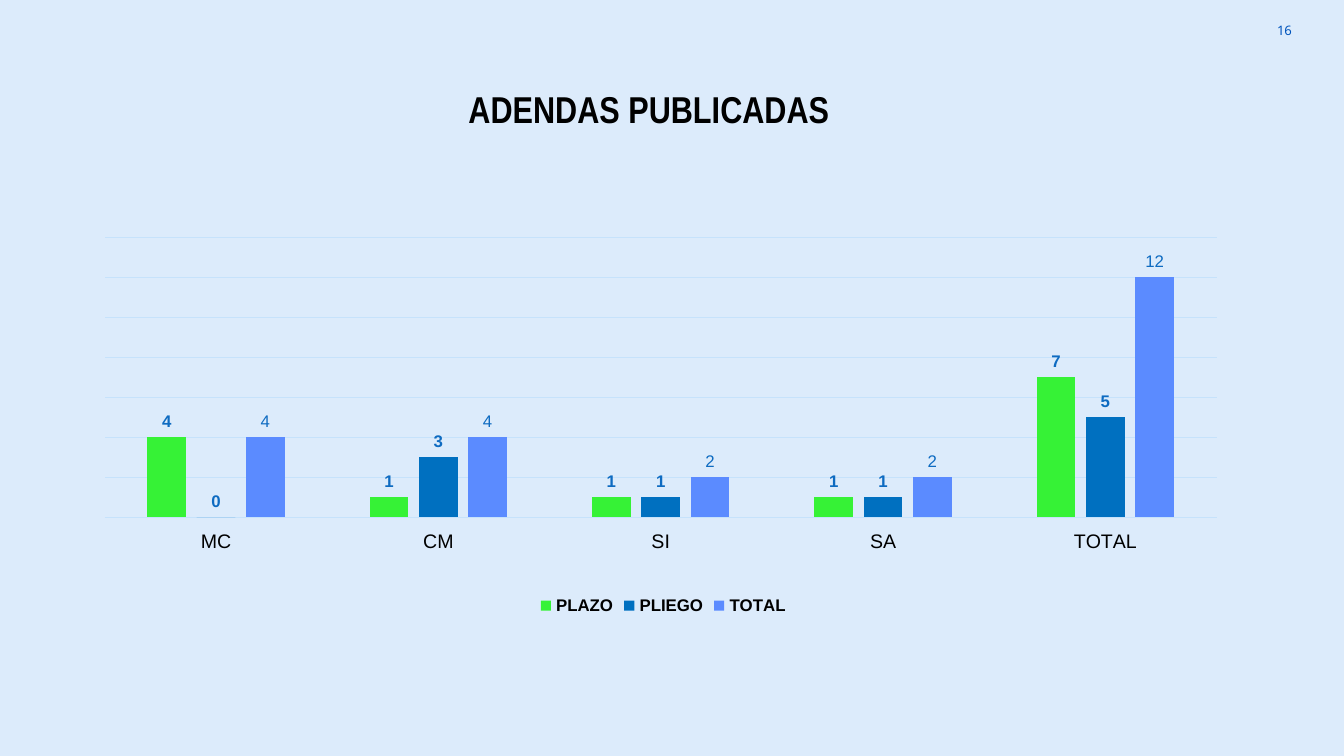
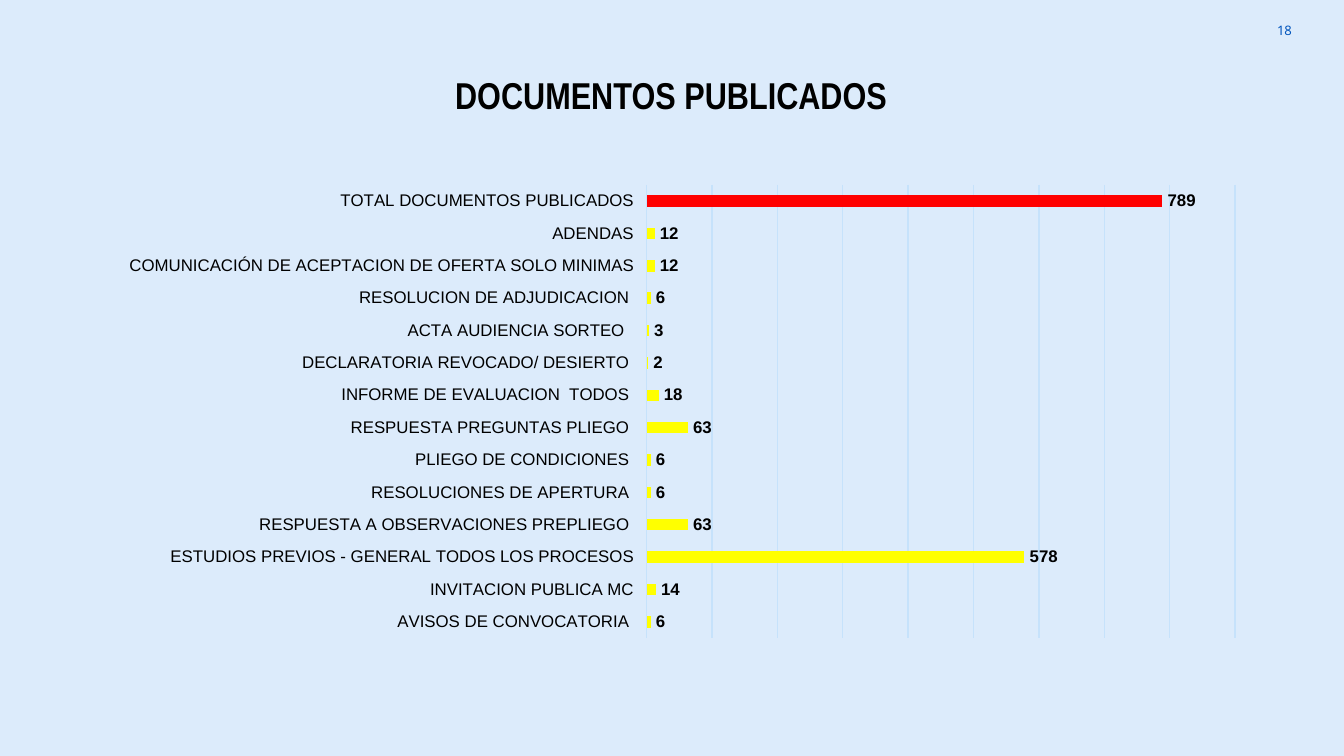
from lxml import etree
from pptx import Presentation
from pptx.chart.data import CategoryChartData
from pptx.dml.color import RGBColor
from pptx.enum.chart import XL_CHART_TYPE, XL_LABEL_POSITION, XL_LEGEND_POSITION, XL_TICK_LABEL_POSITION, XL_TICK_MARK
from pptx.enum.text import MSO_ANCHOR, MSO_AUTO_SIZE, PP_ALIGN
from pptx.oxml.ns import qn
from pptx.util import Pt

COLUMNS, BARS = XL_CHART_TYPE.COLUMN_CLUSTERED, XL_CHART_TYPE.BAR_CLUSTERED
OUTSIDE_END = XL_LABEL_POSITION.OUTSIDE_END
LEGEND_BOTTOM = XL_LEGEND_POSITION.BOTTOM
LABELS_LOW = XL_TICK_LABEL_POSITION.LOW
NO_TICK = XL_TICK_MARK.NONE
TOP, MIDDLE = MSO_ANCHOR.TOP, MSO_ANCHOR.MIDDLE
CENTER, RIGHT = PP_ALIGN.CENTER, PP_ALIGN.RIGHT
NO_AUTOFIT = MSO_AUTO_SIZE.NONE

# Shared look
BACKGROUND, INK, CHART_TEXT = "DCEBFB", "000000", "073763"
GRID, PAGE_BLUE, LABEL_BLUE = "C6E2FB", "0054BC", "0E6BC1"
GREEN, BLUE, PERIWINKLE = "36F236", "0070C0", "5B8BFF"
YELLOW, RED = "FFFF00", "FF0000"
TITLE_ONLY = 5

# Addenda by type of process: name, colour, bold labels, values
PROCESSES = ["MC", "CM", "SI", "SA", "TOTAL"]
ADDENDA = [
    ("PLAZO", GREEN, True, [4, 1, 1, 1, 7]),
    ("PLIEGO", BLUE, True, [0, 3, 1, 1, 5]),
    ("TOTAL", PERIWINKLE, False, [4, 4, 2, 2, 12]),
]

# Published documents, from the bottom bar to the top one
DOCUMENTS = {
    "AVISOS DE CONVOCATORIA ": 6,
    "INVITACION PUBLICA MC": 14,
    "ESTUDIOS PREVIOS - GENERAL TODOS LOS PROCESOS": 578,
    "RESPUESTA A OBSERVACIONES PREPLIEGO ": 63,
    "RESOLUCIONES DE APERTURA ": 6,
    "PLIEGO DE CONDICIONES ": 6,
    "RESPUESTA PREGUNTAS PLIEGO ": 63,
    "INFORME DE EVALUACION  TODOS ": 18,
    "DECLARATORIA REVOCADO/ DESIERTO ": 2,
    "ACTA AUDIENCIA SORTEO  ": 3,
    "RESOLUCION DE ADJUDICACION ": 6,
    "COMUNICACIÓN DE ACEPTACION DE OFERTA SOLO MINIMAS": 12,
    "ADENDAS": 12,
    "TOTAL DOCUMENTOS PUBLICADOS": 789,
}


def rgb(value):
    return RGBColor.from_string(value)


def paint(fill, color):
    fill.solid()
    fill.fore_color.rgb = rgb(color)


def style_font(font, size, color, name="Arial", bold=False):
    font.size, font.name, font.bold = Pt(size), name, bold
    font.color.rgb = rgb(color)


def write_text(frame, text, align=CENTER, anchor=TOP, wrap=False, **font_format):
    frame.text = text
    frame.auto_size = NO_AUTOFIT
    frame.word_wrap = wrap
    frame.vertical_anchor = anchor
    paragraph = frame.paragraphs[0]
    paragraph.alignment = align
    style_font(paragraph.runs[0].font, **font_format)


def add_titled_slide(prs, title, page, left, top, width):
    slide = prs.slides.add_slide(prs.slide_layouts[TITLE_ONLY])
    heading = slide.shapes.title
    heading.left, heading.top = Pt(left), Pt(top)
    heading.width, heading.height = Pt(width), Pt(31.7)
    write_text(heading.text_frame, title, size=20, color=INK, name="Arial Narrow", bold=True)

    page_number = slide.shapes.add_textbox(Pt(656), Pt(0.7), Pt(43.2), Pt(31)).text_frame
    page_number.margin_left = page_number.margin_right = Pt(7.2)
    page_number.margin_top = page_number.margin_bottom = Pt(7.2)
    write_text(page_number, page, align=RIGHT, anchor=MIDDLE, wrap=True,
               size=7, color=PAGE_BLUE, name="Noto Sans")
    return slide


def place_plot(chart, x, y, w, h):
    """Fix the inner plot area, in fractions of the chart."""
    plot_area = chart._chartSpace.chart.plotArea
    for old in plot_area.findall(qn("c:layout")):
        plot_area.remove(old)
    layout = etree.Element(qn("c:layout"))
    manual = etree.SubElement(layout, qn("c:manualLayout"))
    settings = [("layoutTarget", "inner"), ("xMode", "edge"), ("yMode", "edge"),
                ("x", x), ("y", y), ("w", w), ("h", h)]
    for tag, value in settings:
        etree.SubElement(manual, qn(f"c:{tag}")).set("val", str(value))
    plot_area.insert(0, layout)


def draw_line(line):
    line.color.rgb = rgb(GRID)
    line.width = Pt(0.75)


def add_value_chart(slide, kind, box, categories, series, plot_box, gap, top_value, step, category_size):
    data = CategoryChartData(number_format="0")
    data.categories = categories
    for name, values in series:
        data.add_series(name, values)
    chart = slide.shapes.add_chart(kind, *map(Pt, box), data).chart
    chart.has_title = False
    chart.has_legend = False
    style_font(chart.font, 10, CHART_TEXT)
    place_plot(chart, *plot_box)
    chart.plots[0].gap_width = gap
    chart.plots[0].vary_by_categories = False

    category_axis = chart.category_axis
    category_axis.major_tick_mark = category_axis.minor_tick_mark = NO_TICK
    category_axis.tick_label_position = LABELS_LOW
    category_axis.has_major_gridlines = False
    style_font(category_axis.tick_labels.font, category_size, INK)
    draw_line(category_axis.format.line)

    value_axis = chart.value_axis
    value_axis.visible = False
    value_axis.minimum_scale, value_axis.maximum_scale = 0, top_value
    value_axis.major_unit = step
    value_axis.has_major_gridlines = True
    draw_line(value_axis.major_gridlines.format.line)
    return chart


def style_series(series, color, label_color, bold):
    paint(series.format.fill, color)
    series.invert_if_negative = False
    labels = series.data_labels
    labels.show_value = True
    labels.position = OUTSIDE_END
    labels.number_format, labels.number_format_is_linked = "0", False
    style_font(labels.font, 9, label_color, bold=bold)


def build_addenda(prs):
    slide = add_titled_slide(prs, "ADENDAS PUBLICADAS", "16", 242.6, 42.5, 210.2)
    chart = add_value_chart(
        slide, COLUMNS, (30.2, 88.6, 650.2, 244), PROCESSES,
        [(name, values) for name, _, _, values in ADDENDA],
        plot_box=(0.04, 0.158, 0.916, 0.615), gap=219, top_value=14, step=2, category_size=10.5)
    chart.plots[0].overlap = -27
    for series, (_, color, bold, _) in zip(chart.plots[0].series, ADDENDA):
        style_series(series, color, LABEL_BLUE, bold)
    chart.has_legend = True
    chart.legend.position = LEGEND_BOTTOM
    chart.legend.include_in_layout = False
    style_font(chart.legend.font, 9, INK, bold=True)


def build_documents(prs):
    slide = add_titled_slide(prs, "DOCUMENTOS PUBLICADOS", "18", 235.4, 35.3, 248.4)
    chart = add_value_chart(
        slide, BARS, (61.9, 94.3, 612, 253.4), list(DOCUMENTS),
        [("Series 1", list(DOCUMENTS.values()))],
        plot_box=(0.465, 0.019, 0.515, 0.958), gap=182, top_value=900, step=100, category_size=9)
    documents = chart.plots[0].series[0]
    style_series(documents, YELLOW, INK, True)
    # The total stands out
    paint(documents.points[len(DOCUMENTS) - 1].format.fill, RED)


def main():
    prs = Presentation()
    prs.slide_width, prs.slide_height = Pt(720), Pt(405)
    paint(prs.slide_master.background.fill, BACKGROUND)
    build_addenda(prs)
    build_documents(prs)
    prs.save("out.pptx")


if __name__ == "__main__":
    main()
